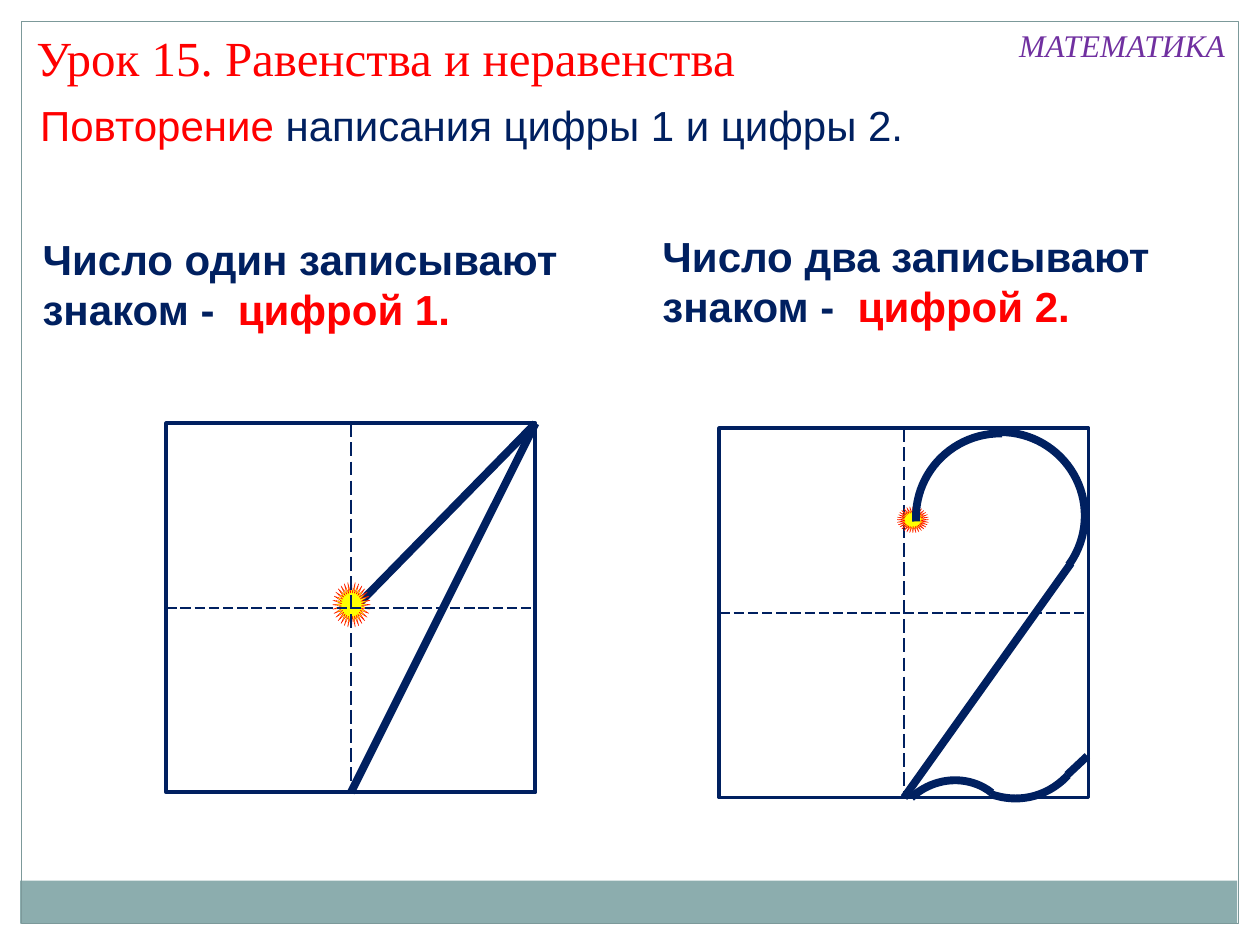
"""Build the lesson slide that revises how digits 1 and 2 are written."""
from typing import NamedTuple

import pptx
import pptx.dml.color
import pptx.enum.dml
import pptx.enum.shapes
import pptx.enum.text
import pptx.oxml.ns
import pptx.util
from lxml import etree
from pptx.util import Inches

NAVY, RED, YELLOW, PURPLE = "002060", "FF0000", "FFFF00", "7030A0"
BAND, FRAME = "8CADAE", "7C999A"
SHAPES = pptx.enum.shapes.MSO_SHAPE
DASHES = pptx.enum.dml.MSO_LINE
CELL_SIZE = 2.93
STROKE_WIDTH = 4.5


class Box(NamedTuple):
    """Place and size in inches."""
    left: float
    top: float
    width: float
    height: float


class Caption(NamedTuple):
    """Text made of coloured phrases in one font."""
    box: Box
    phrases: list[tuple[str, str]]
    size: int
    font: str = "Arial"
    bold: bool = False
    italic: bool = False
    wrap: bool = True


class Arc(NamedTuple):
    """Curved stroke with its rotation and end angles."""
    box: Box
    rotation: float
    start: float
    end: float


class Stroke(NamedTuple):
    """Straight stroke between two points."""
    x1: float
    y1: float
    x2: float
    y2: float


CAPTIONS = [
    Caption(Box(0.19, 0.17, 7.8, 0.57), [("Урок 15. Равенства и неравенства", RED)],
            28, "Times New Roman"),
    Caption(Box(7.99, 0.16, 1.85, 0.4), [("МАТЕМАТИКА", PURPLE)],
            18, "Times New Roman", italic=True, wrap=False),
    Caption(Box(0.22, 0.74, 8.95, 0.5),
            [("Повторение", RED), (" написания цифры 1 и цифры 2.", NAVY)], 24),
    Caption(Box(0.24, 1.8, 4.33, 0.91),
            [("Число один записывают знаком -  ", NAVY), ("цифрой 1.", RED)], 24, bold=True),
    Caption(Box(5.16, 1.78, 4.44, 0.91),
            [("Число два записывают знаком -  ", NAVY), ("цифрой 2.", RED)], 24, bold=True),
]

TWO_ARCS = [
    Arc(Box(7.27, 3.44, 1.34, 1.33), 356.5, 108.36, 164.77),
    Arc(Box(7.27, 3.43, 1.34, 1.33), 356.5, 160.83, 23.52),
    Arc(Box(7.41, 4.95, 1.24, 1.39), 167.7, 144.66, 178),
    Arc(Box(7.07, 6.2, 0.97, 0.91), 330.4, 152.94, 204.53),
]


def rgb(value: str) -> pptx.dml.color.RGBColor:
    """Turn a hex string into a colour."""
    return pptx.dml.color.RGBColor.from_string(value)


def style_line(line, color: str, width: float, dash=None) -> None:
    """Set colour, width and dash of a line."""
    line.color.rgb = rgb(color)
    line.width = pptx.util.Pt(width)
    if dash is not None:
        line.dash_style = dash


def add_figure(slide, kind, box: Box, fill: str = "", line: str = "",
               width: float = 1, dash=None):
    """Draw a preset shape with an optional fill and line."""
    figure = slide.shapes.add_shape(kind, *map(Inches, box))
    figure.shadow.inherit = False
    if fill:
        figure.fill.solid()
        figure.fill.fore_color.rgb = rgb(fill)
    else:
        figure.fill.background()
    if line:
        style_line(figure.line, line, width, dash)
    else:
        figure.line.fill.background()
    return figure


def add_stroke(slide, stroke: Stroke, width: float = STROKE_WIDTH, dash=None):
    """Draw a straight navy line."""
    connector = slide.shapes.add_connector(
        pptx.enum.shapes.MSO_CONNECTOR.STRAIGHT, *map(Inches, stroke))
    style_line(connector.line, NAVY, width, dash)
    properties = connector._element.spPr
    etree.SubElement(properties, pptx.oxml.ns.qn("a:effectLst"))
    return connector


def add_cell(slide, left: float, top: float):
    """Draw the square of a writing cell."""
    return add_figure(slide, SHAPES.RECTANGLE, Box(left, top, CELL_SIZE, CELL_SIZE),
                      line=NAVY, width=2.25)


def add_midlines(slide, cell) -> None:
    """Join the opposite sides of a cell with dashed lines."""
    for begin, end, width in ((0, 2, 1), (1, 3, 0.75)):
        midline = add_stroke(slide, Stroke(0, 0, 1, 1), width, DASHES.LONG_DASH)
        midline.begin_connect(cell, begin)
        midline.end_connect(cell, end)


def add_start_point(slide, box: Box) -> None:
    """Draw the star where writing begins."""
    star = add_figure(slide, SHAPES.STAR_32_POINT, box, YELLOW, RED, 0.25, DASHES.SQUARE_DOT)
    star.adjustments[0] = 0.26


def add_arc(slide, arc: Arc) -> None:
    """Draw a curved stroke."""
    curve = add_figure(slide, SHAPES.ARC, arc.box, line=NAVY, width=STROKE_WIDTH)
    curve.rotation = arc.rotation
    curve.adjustments[0] = arc.start
    curve.adjustments[1] = arc.end


def add_caption(slide, caption: Caption) -> None:
    """Write a text box."""
    frame = slide.shapes.add_textbox(*map(Inches, caption.box)).text_frame
    frame.word_wrap = caption.wrap
    frame.auto_size = pptx.enum.text.MSO_AUTO_SIZE.SHAPE_TO_FIT_TEXT
    paragraph = frame.paragraphs[0]
    paragraph.font.size = pptx.util.Pt(caption.size)
    paragraph.font.name = caption.font
    paragraph.font.bold = caption.bold
    paragraph.font.italic = caption.italic
    for text, color in caption.phrases:
        run = paragraph.add_run()
        run.text = text
        run.font.color.rgb = rgb(color)


def draw_one(slide) -> None:
    """Draw digit 1 in its cell."""
    cell = add_cell(slide, 1.32, 3.36)
    add_stroke(slide, Stroke(2.82, 4.82, 4.25, 3.36))
    add_stroke(slide, Stroke(4.25, 3.36, 2.79, 6.29)).end_connect(cell, 2)
    add_start_point(slide, Box(2.64, 4.62, 0.3, 0.36))
    add_midlines(slide, cell)


def draw_two(slide) -> None:
    """Draw digit 2 in its cell."""
    cell = add_cell(slide, 5.71, 3.4)
    add_midlines(slide, cell)
    add_start_point(slide, Box(7.12, 4.02, 0.25, 0.21))
    for arc in TWO_ARCS:
        add_arc(slide, arc)
    add_stroke(slide, Stroke(8.5, 4.47, 7.17, 6.33)).end_connect(cell, 2)
    add_stroke(slide, Stroke(8.47, 6.15, 8.63, 6))


def main() -> None:
    """Build and save the slide."""
    deck = pptx.Presentation()
    deck.slide_width, deck.slide_height = Inches(10), Inches(7.5)
    slide = deck.slides.add_slide(deck.slide_layouts[6])
    add_figure(slide, SHAPES.RECTANGLE, Box(0.16, 6.99, 9.66, 0.34), fill=BAND)
    add_figure(slide, SHAPES.RECTANGLE, Box(0.17, 0.17, 9.66, 7.16), line=FRAME, width=0.75)
    for caption in CAPTIONS:
        add_caption(slide, caption)
    draw_one(slide)
    draw_two(slide)
    deck.save("out.pptx")


if __name__ == "__main__":
    main()
